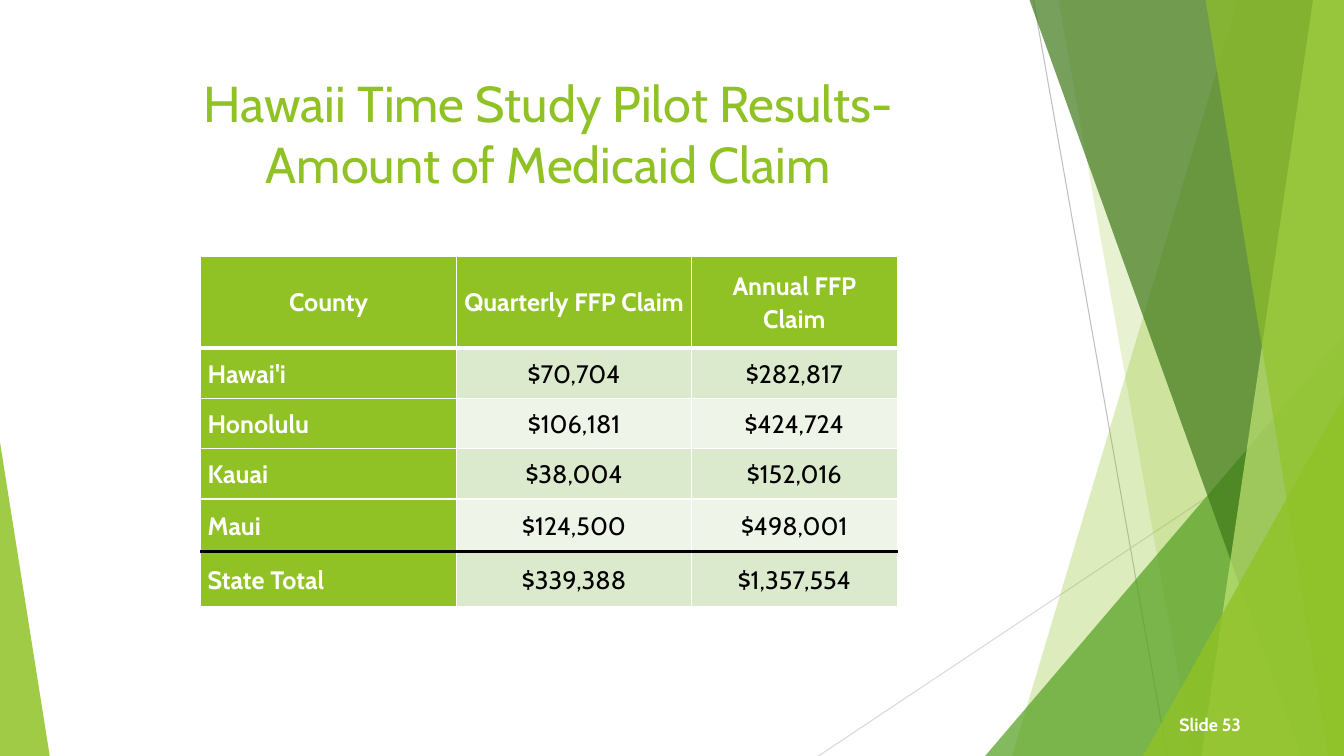
from lxml.etree import SubElement
from pptx import Presentation
from pptx.dml.color import RGBColor
from pptx.enum.shapes import MSO_CONNECTOR as Connector, MSO_SHAPE as Preset
from pptx.enum.text import MSO_ANCHOR as Anchor, PP_ALIGN as Align
from pptx.oxml.ns import qn
from pptx.util import Inches, Pt

GREEN, WHITE, BLACK = "90C226", "FFFFFF", "000000"
BANDS = ("DBE9CD", "EEF4E8")


def color(hex_code):
    return RGBColor.from_string(hex_code)


class SlideKit:
    """Draws on one slide; all lengths are percentages of its width or height."""

    font = "Cabin"

    def __init__(self, deck):
        self.width, self.height = deck.slide_width, deck.slide_height
        self.slide = deck.slides.add_slide(deck.slide_layouts[6])
        self.shapes = self.slide.shapes

    def x(self, share):
        return round(self.width * share / 100)

    def y(self, share):
        return round(self.height * share / 100)

    def box(self, left, top, width, height):
        return self.x(left), self.y(top), self.x(width), self.y(height)

    def line(self, start, end, hex_code):
        rule = self.shapes.add_connector(
            Connector.STRAIGHT, self.x(start[0]), self.y(start[1]),
            self.x(end[0]), self.y(end[1]))
        rule.line.color.rgb = color(hex_code)
        rule.line.width = Pt(0.75)
        SubElement(rule._element.spPr, qn("a:effectLst"))

    def paint(self, shape, hex_code, opacity):
        shape.shadow.inherit = False
        shape.line.fill.background()
        shape.fill.solid()
        shape.fill.fore_color.rgb = color(hex_code)
        tint = shape._element.spPr.find(qn("a:solidFill"))[0]
        SubElement(tint, qn("a:alpha"), val=str(opacity * 1000))

    def facet(self, top_left, top_right, bottom_left, hex_code, opacity):
        """A band between the top and bottom edges, ending at the right edge."""
        corners = [(top_left, 0), (top_right, 0), (100, 100), (bottom_left, 100)]
        points = [(self.x(x), self.y(y)) for x, y in corners]
        outline = self.shapes.build_freeform(*points[0], scale=1.0)
        outline.add_line_segments(points[1:], close=True)
        self.paint(outline.convert_to_shape(), hex_code, opacity)

    def triangle(self, left, top, width, apex, hex_code, opacity):
        """A triangle standing on the bottom edge."""
        shape = self.shapes.add_shape(
            Preset.ISOSCELES_TRIANGLE, *self.box(left, top, width, 100 - top))
        shape.adjustments[0] = apex
        self.paint(shape, hex_code, opacity)

    def add_words(self, paragraph, lines, size, hex_code, align, bold=False):
        paragraph.alignment = align
        for number, words in enumerate(lines):
            if number:
                paragraph.add_line_break()
            run = paragraph.add_run()
            run.text = words
            run.font.name, run.font.size, run.font.bold = self.font, Pt(size), bold
            run.font.color.rgb = color(hex_code)

    def text(self, area, lines, size, hex_code, align, bold=False):
        frame = self.shapes.add_textbox(*self.box(*area)).text_frame
        frame.word_wrap = True
        self.add_words(frame.paragraphs[0], lines, size, hex_code, align, bold)

    def border(self, cell, side, hex_code, points):
        edge = SubElement(cell._tc.get_or_add_tcPr(), qn("a:ln" + side), w=str(Pt(points)))
        SubElement(SubElement(edge, qn("a:solidFill")), qn("a:srgbClr"), val=hex_code)

    def cell(self, cell, words, fill, hex_code, align, bold, above, below):
        edges = {"L": (WHITE, 1), "R": (WHITE, 1), "T": above, "B": below}
        for side, edge in edges.items():
            self.border(cell, side, *edge)
        cell.fill.solid()
        cell.fill.fore_color.rgb = color(fill)
        cell.vertical_anchor = Anchor.MIDDLE
        cell.margin_left = cell.margin_right = Inches(0.07)
        cell.margin_top = cell.margin_bottom = 0
        paragraph = cell.text_frame.paragraphs[0]
        paragraph.line_spacing = 1.07
        self.add_words(paragraph, [words], 18, hex_code, align, bold)

    def table(self, left, top, widths, heights, records):
        area = self.box(left, top, sum(widths), sum(heights))
        grid = self.shapes.add_table(len(heights), len(widths), *area).table
        grid.horz_banding = False
        for column, width in zip(grid.columns, widths):
            column.width = self.x(width)
        for row, height in zip(grid.rows, heights):
            row.height = self.y(height)
        # Rules between rows: heavy under the header, black above the total
        rules = [(WHITE, 1)] * (len(records) + 1)
        rules[1], rules[-2] = (WHITE, 3), (BLACK, 2.25)
        for r, record in enumerate(records):
            for c, words in enumerate(record):
                label = r == 0 or c == 0
                self.cell(
                    grid.cell(r, c), words,
                    fill=GREEN if label else BANDS[(r - 1) % 2],
                    hex_code=WHITE if label else BLACK,
                    align=Align.LEFT if r and c == 0 else Align.CENTER,
                    bold=label, above=rules[r], below=rules[r + 1])


def main():
    deck = Presentation()
    deck.slide_width, deck.slide_height = Inches(13.333), Inches(7.5)
    kit = SlideKit(deck)

    # Background facets
    kit.line((76.9, 0), (86.85, 100), "BFBFBF")
    kit.line((100, 53.7), (60.9, 100), "D9D9D9")
    kit.facet(92.1, 100, 75.3, GREEN, 30)
    kit.facet(78.75, 100, 88.75, GREEN, 20)
    kit.triangle(73.3, 44.4, 26.7, 1, "54A021", 72)
    kit.facet(76.6, 100, 96.8, "3F7819", 70)
    kit.facet(97.7, 100, 89.4, "C0E474", 70)
    kit.facet(89.7, 100, 98.85, GREEN, 65)
    kit.triangle(85.05, 52.4, 14.95, 1, GREEN, 80)
    kit.triangle(0, 58.5, 3.7, 0, GREEN, 85)

    # Title
    kit.text((5.55, 8.9, 70.5, 19.2),
             ["Hawaii Time Study Pilot Results-", "Amount of Medicaid Claim"],
             36, GREEN, Align.CENTER)

    # Claims by county
    claims = [
        ("County", "Quarterly FFP Claim", "Annual FFP Claim"),
        ("Hawai'i", "$70,704", "$282,817"),
        ("Honolulu", "$106,181", "$424,724"),
        ("Kauai", "$38,004", "$152,016"),
        ("Maui", "$124,500", "$498,001"),
        ("State Total", "$339,388", "$1,357,554"),
    ]
    kit.table(14.93, 33.87, widths=(19.05, 17.48, 15.3),
              heights=(12.13, 6.67, 6.67, 6.67, 6.93, 7.33), records=claims)

    # Slide number
    kit.text((78.68, 93.73, 14.4, 4.13), ["Slide 53"], 12.7, WHITE, Align.RIGHT, bold=True)

    deck.save("out.pptx")


if __name__ == "__main__":
    main()
